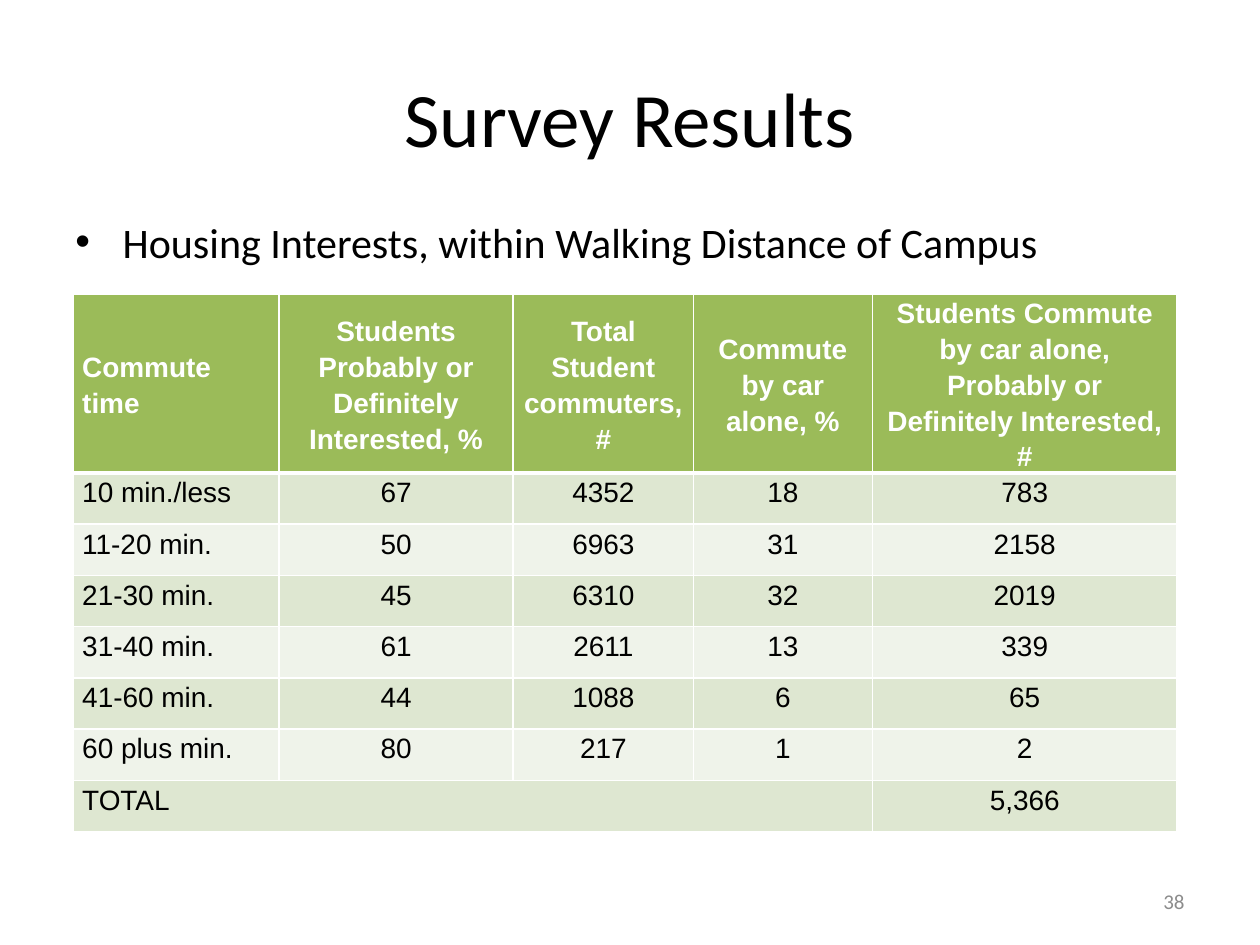
from dataclasses import dataclass

from lxml import etree
from pptx import Presentation
from pptx.dml.color import RGBColor
from pptx.enum.text import MSO_ANCHOR, PP_ALIGN
from pptx.oxml.ns import qn
from pptx.util import Pt

LEFT, CENTER, RIGHT = PP_ALIGN.LEFT, PP_ALIGN.CENTER, PP_ALIGN.RIGHT
TOP, MIDDLE = MSO_ANCHOR.TOP, MSO_ANCHOR.MIDDLE
TITLE_ONLY = 5


@dataclass(frozen=True)
class Theme:
    text: str = "000000"
    white: str = "FFFFFF"
    muted: str = "8C8C8C"
    header: str = "9BBB59"
    bands: tuple = ("DEE7D1", "EFF3EA")
    font: str = "Calibri"
    table_font: str = "Arial"
    title_size: int = 44
    body_size: int = 24
    table_size: int = 16
    number_size: int = 12


THEME = Theme()

COLUMN_WIDTHS = (117.36, 133.92, 102.96, 102.24, 174.24)
HEADER_HEIGHT, ROW_HEIGHT = 101, 29.3
ROWS = (
    ("Commute time", "Students Probably or Definitely Interested, %",
     "Total Student commuters, #", "Commute by car alone, %",
     "Students Commute by car alone, Probably or Definitely Interested, #"),
    ("10 min./less", "67", "4352", "18", "783"),
    ("11-20 min.", "50", "6963", "31", "2158"),
    ("21-30 min.", "45", "6310", "32", "2019"),
    ("31-40 min.", "61", "2611", "13", "339"),
    ("41-60 min.", "44", "1088", "6", "65"),
    ("60 plus min.", "80", "217", "1", "2"),
    ("TOTAL", "", "", "", "5,366"),
)


def set_attributes(target, values):
    for name, value in values.items():
        setattr(target, name, value)


def write(tf, text, size, color, align=LEFT, font=THEME.font, bold=False):
    """Put one formatted paragraph in a text frame and return it."""
    p = tf.paragraphs[0]
    p.alignment = align
    r = p.add_run()
    r.text = text
    set_attributes(r.font, {"name": font, "size": Pt(size), "bold": bold})
    r.font.color.rgb = RGBColor.from_string(color)
    return p


def place(sp, left, top, width, height):
    set_attributes(sp, {"left": Pt(left), "top": Pt(top),
                        "width": Pt(width), "height": Pt(height)})


def add_title(slide, text):
    sp = slide.shapes.title
    place(sp, 36, 21.6, 648, 90)
    sp.text_frame.vertical_anchor = MIDDLE
    write(sp.text_frame, text, THEME.title_size, THEME.text, CENTER)


def add_text(slide, box, text, size, color, align=LEFT, anchor=TOP):
    sp = slide.shapes.add_textbox(*map(Pt, box))
    set_attributes(sp.text_frame, {"word_wrap": True, "vertical_anchor": anchor})
    return write(sp.text_frame, text, size, color, align)


def add_bullet(p, indent):
    pPr = p._p.get_or_add_pPr()
    pPr.set("marL", str(Pt(indent)))
    pPr.set("indent", str(-Pt(indent)))
    etree.SubElement(pPr, qn("a:buFont"), typeface="Arial")
    etree.SubElement(pPr, qn("a:buChar"), char="•")


def set_borders(cell, bottom):
    tcPr = cell._tc.get_or_add_tcPr()
    for side, width in (("L", 1), ("R", 1), ("T", 1), ("B", bottom)):
        ln = etree.SubElement(tcPr, qn(f"a:ln{side}"), w=str(Pt(width)))
        fill = etree.SubElement(ln, qn("a:solidFill"))
        etree.SubElement(fill, qn("a:srgbClr"), val=THEME.white)


def format_cell(cell, text, row, col):
    is_header = row == 0
    set_attributes(cell, {"margin_left": Pt(5), "margin_right": Pt(5),
                          "margin_top": 0, "margin_bottom": 0,
                          "vertical_anchor": MIDDLE if is_header else TOP})
    set_borders(cell, 3 if is_header else 1)
    cell.fill.solid()
    cell.fill.fore_color.rgb = RGBColor.from_string(
        THEME.header if is_header else THEME.bands[(row - 1) % 2])
    if text:
        p = write(cell.text_frame, text, THEME.table_size,
                  THEME.white if is_header else THEME.text,
                  CENTER if col else LEFT, THEME.table_font, is_header)
        p.line_spacing = 1.15


def add_survey_table(slide, left, top):
    heights = [HEADER_HEIGHT] + [ROW_HEIGHT] * (len(ROWS) - 1)
    table = slide.shapes.add_table(
        len(ROWS), len(COLUMN_WIDTHS), Pt(left), Pt(top),
        Pt(sum(COLUMN_WIDTHS)), Pt(sum(heights))).table
    for column, width in zip(table.columns, COLUMN_WIDTHS):
        column.width = Pt(width)
    for i, (height, values) in enumerate(zip(heights, ROWS)):
        table.rows[i].height = Pt(height)
        for j, text in enumerate(values):
            format_cell(table.cell(i, j), text, i, j)
    last = len(ROWS) - 1
    table.cell(last, 0).merge(table.cell(last, 3))


def main():
    prs = Presentation()
    set_attributes(prs, {"slide_width": Pt(720), "slide_height": Pt(540)})
    slide = prs.slides.add_slide(prs.slide_layouts[TITLE_ONLY])
    add_survey_table(slide, 42, 168)
    p = add_text(slide, (36, 120, 648, 356.4),
                 "Housing Interests, within Walking Distance of Campus",
                 THEME.body_size, THEME.text)
    p.space_before = Pt(4.8)
    add_bullet(p, 27)
    add_title(slide, "Survey Results")
    add_text(slide, (516, 500.5, 168, 28.75), "38",
             THEME.number_size, THEME.muted, RIGHT, MIDDLE)
    prs.save("out.pptx")


if __name__ == "__main__":
    main()
